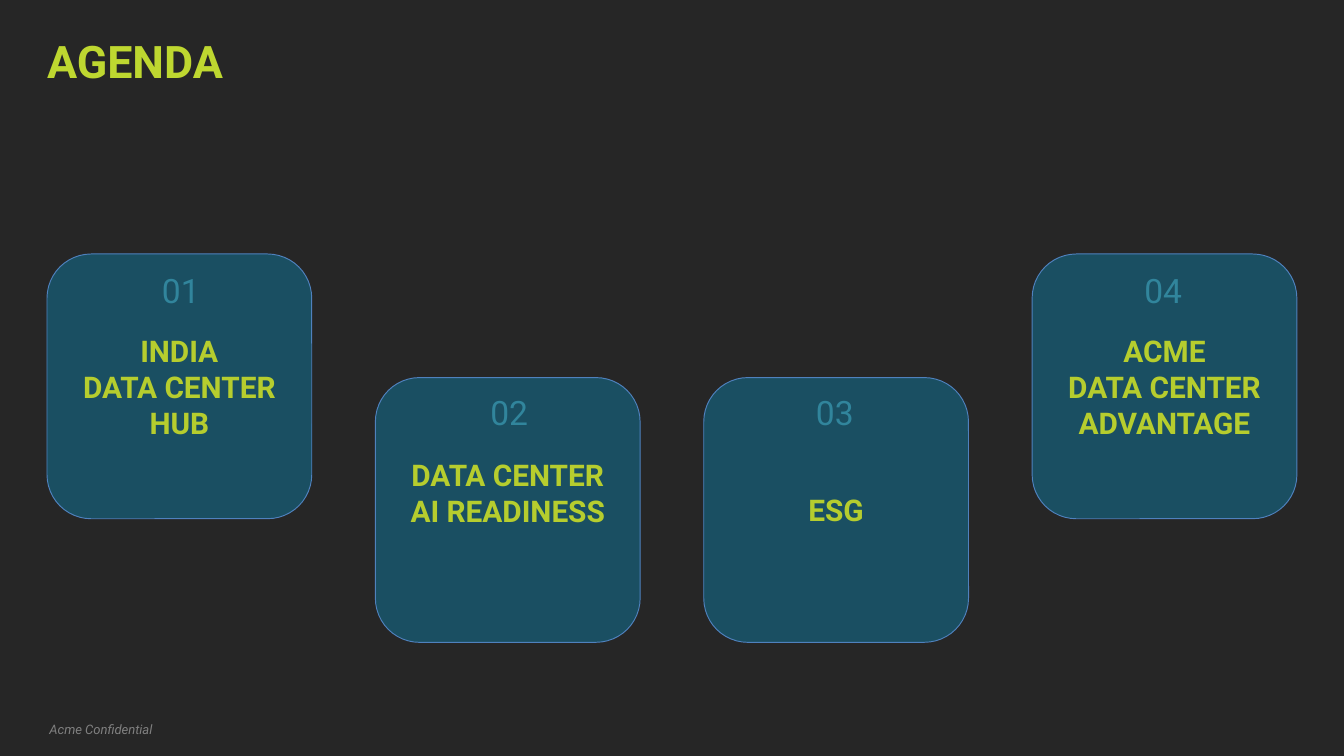
from dataclasses import dataclass

from lxml.etree import SubElement
from pptx import Presentation
from pptx.dml.color import RGBColor
from pptx.enum.shapes import MSO_SHAPE
from pptx.enum.text import MSO_ANCHOR, PP_ALIGN
from pptx.oxml.ns import qn
from pptx.util import Inches, Pt


@dataclass(frozen=True)
class Theme:
    font: str = "Roboto"
    background: str = "262626"
    title: str = "BED730"
    topic: str = "B6CD2E"
    number: str = "31859C"
    footer: str = "808080"
    card: str = "00B0F0"
    card_opacity: int = 30
    outline: str = "4F81BD"
    title_size: int = 24
    number_size: int = 18
    topic_size: int = 16
    footer_size: int = 7


THEME = Theme()
WIDTH = 10
HEIGHT = WIDTH * 9 / 16
MARGIN = 0.35
CARD = 1.97
NUMBER_WIDTH = 1.99
ROW_TOPS = (1.89, 2.81)
NUMBER_TOPS = (1.96, 2.87)

# Row of the grid, lines of the topic, bottom inset
TOPICS = (
    (0, ("INDIA", "DATA CENTER HUB"), 0.05),
    (1, ("DATA CENTER AI READINESS",), 0.31),
    (1, ("ESG",), 0.05),
    (0, ("ACME", "DATA CENTER ADVANTAGE"), 0.05),
)


def write_text(text_frame, lines, size, color, align=PP_ALIGN.LEFT, bold=False, italic=False):
    text_frame.word_wrap = True
    text_frame.text = "\n".join(lines)
    for paragraph in text_frame.paragraphs:
        paragraph.alignment = align
        for run in paragraph.runs:
            font = run.font
            font.name, font.size = THEME.font, Pt(size)
            font.bold, font.italic = bold, italic
            font.color.rgb = RGBColor.from_string(color)


def add_label(slide, box, text, size, color, **style):
    label = slide.shapes.add_textbox(*map(Inches, box))
    write_text(label.text_frame, [text], size, color, **style)


def set_opacity(shape, percent):
    color = shape.fill._xPr.find(qn("a:solidFill"))[0]
    SubElement(color, qn("a:alpha"), val=str(percent * 1000))


def set_title(slide, text):
    title = slide.shapes.title
    title.left, title.top = Inches(MARGIN), Inches(0.21)
    title.width, title.height = Inches(WIDTH - 2 * MARGIN), Inches(0.48)
    text_frame = title.text_frame
    text_frame.margin_left = 0
    text_frame.vertical_anchor = MSO_ANCHOR.MIDDLE
    write_text(text_frame, [text], THEME.title_size, THEME.title, bold=True)


def add_card(slide, column, row, lines, bottom_inset):
    """Draw a topic card; its number box meets the card's outer edge."""
    pitch = (WIDTH - 2 * MARGIN - CARD) / (len(TOPICS) - 1)
    left = MARGIN + column * pitch
    card = slide.shapes.add_shape(
        MSO_SHAPE.ROUNDED_RECTANGLE, *map(Inches, (left, ROW_TOPS[row], CARD, CARD)))
    card.shadow.inherit = False
    card.fill.solid()
    card.fill.fore_color.rgb = RGBColor.from_string(THEME.card)
    set_opacity(card, THEME.card_opacity)
    card.line.color.rgb = RGBColor.from_string(THEME.outline)
    card.line.width = Pt(0.5)
    card.text_frame.vertical_anchor = MSO_ANCHOR.MIDDLE
    card.text_frame.margin_bottom = Inches(bottom_inset)
    write_text(card.text_frame, lines, THEME.topic_size, THEME.topic,
               align=PP_ALIGN.CENTER, bold=True)

    in_left_half = column < len(TOPICS) / 2
    number_left = left if in_left_half else left + CARD - NUMBER_WIDTH
    add_label(slide, (number_left, NUMBER_TOPS[row], NUMBER_WIDTH, 0.4), f"{column + 1:02}",
              THEME.number_size, THEME.number, align=PP_ALIGN.CENTER)


def main():
    presentation = Presentation()
    presentation.slide_width, presentation.slide_height = Inches(WIDTH), Inches(HEIGHT)
    slide = presentation.slides.add_slide(presentation.slide_layouts[5])
    slide.background.fill.solid()
    slide.background.fill.fore_color.rgb = RGBColor.from_string(THEME.background)

    set_title(slide, "AGENDA")
    for column, topic in enumerate(TOPICS):
        add_card(slide, column, *topic)
    add_label(slide, (0.27, 5.32, 1.46, 0.22), "Acme Confidential",
              THEME.footer_size, THEME.footer, italic=True)
    presentation.save("out.pptx")


if __name__ == "__main__":
    main()
